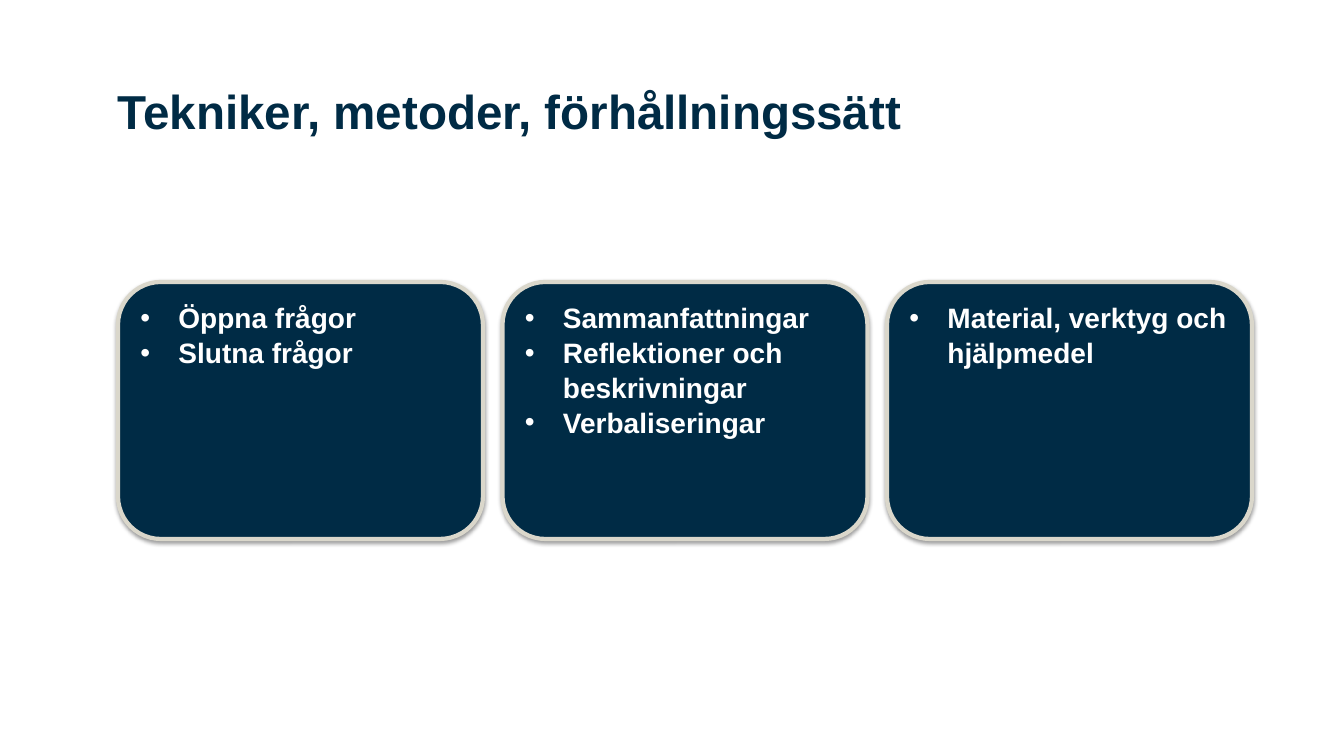
from lxml.etree import SubElement
from pptx import Presentation
from pptx.dml.color import RGBColor
from pptx.enum.shapes import MSO_SHAPE
from pptx.enum.text import MSO_ANCHOR, PP_ALIGN
from pptx.oxml.ns import qn
from pptx.util import Pt

TITLE = "Tekniker, metoder, förhållningssätt"
CARDS = [
    ["Öppna frågor", "Slutna frågor"],
    ["Sammanfattningar", "Reflektioner och beskrivningar", "Verbaliseringar"],
    ["Material, verktyg och hjälpmedel"],
]
NAVY, SAND, WHITE, BLACK = "002B45", "DAD7CB", "FFFFFF", "000000"
SLIDE_WIDTH, SLIDE_HEIGHT = 1344, 756
LEFT, RIGHT = 118, 1252
TITLE_TOP, TITLE_WIDTH, TITLE_HEIGHT = 76, 1206, 143
CARD_TOP, CARD_WIDTH, CARD_HEIGHT = 282, 365, 257
BULLET_INDENT = 38


def px(length):
    return round(length * 914400 / 100.8)


def color(code):
    return RGBColor.from_string(code)


def write(frame, lines, size, ink, spacing, bullet=None):
    frame.word_wrap = True
    frame.vertical_anchor = MSO_ANCHOR.TOP
    for index, line in enumerate(lines):
        paragraph = frame.add_paragraph() if index else frame.paragraphs[0]
        paragraph.alignment = PP_ALIGN.LEFT
        paragraph.line_spacing = spacing
        if bullet:
            properties = paragraph._p.get_or_add_pPr()
            properties.set("marL", str(px(BULLET_INDENT)))
            properties.set("indent", str(-px(BULLET_INDENT)))
            SubElement(properties, qn("a:buFont"), typeface="Arial")
            SubElement(properties, qn("a:buChar"), char=bullet)
        run = paragraph.add_run()
        run.text = line
        run.font.name = "Arial"
        run.font.size = Pt(size)
        run.font.bold = True
        run.font.color.rgb = color(ink)


def add_shadow(shape):
    shape.shadow.inherit = False
    effects = shape._element.spPr.find(qn("a:effectLst"))
    shadow = SubElement(effects, qn("a:outerShdw"), blurRad=str(Pt(3.1)),
                        dist=str(Pt(1.6)), dir="5400000", rotWithShape="0")
    tint = SubElement(shadow, qn("a:srgbClr"), val=BLACK)
    SubElement(tint, qn("a:alpha"), val="38000")


def add_card(slide, left, lines):
    card = slide.shapes.add_shape(MSO_SHAPE.ROUNDED_RECTANGLE, px(left), px(CARD_TOP),
                                  px(CARD_WIDTH), px(CARD_HEIGHT))
    card.fill.solid()
    card.fill.fore_color.rgb = color(NAVY)
    card.line.color.rgb = color(SAND)
    card.line.width = Pt(3)
    add_shadow(card)
    write(card.text_frame, lines, size=20, ink=WHITE, spacing=1.04, bullet="•")


def main():
    """Build the slide with a title and a row of bulleted cards."""
    deck = Presentation()
    deck.slide_width, deck.slide_height = px(SLIDE_WIDTH), px(SLIDE_HEIGHT)
    slide = deck.slides.add_slide(deck.slide_layouts[5])

    title = slide.shapes.title
    title.left, title.top = px(LEFT), px(TITLE_TOP)
    title.width, title.height = px(TITLE_WIDTH), px(TITLE_HEIGHT)
    frame = title.text_frame
    frame.margin_left = frame.margin_top = frame.margin_right = frame.margin_bottom = 0
    write(frame, [TITLE], size=34, ink=NAVY, spacing=1.1)

    pitch = (RIGHT - LEFT - CARD_WIDTH) / (len(CARDS) - 1)
    for index, lines in enumerate(CARDS):
        add_card(slide, LEFT + index * pitch, lines)

    deck.save("out.pptx")


if __name__ == "__main__":
    main()
